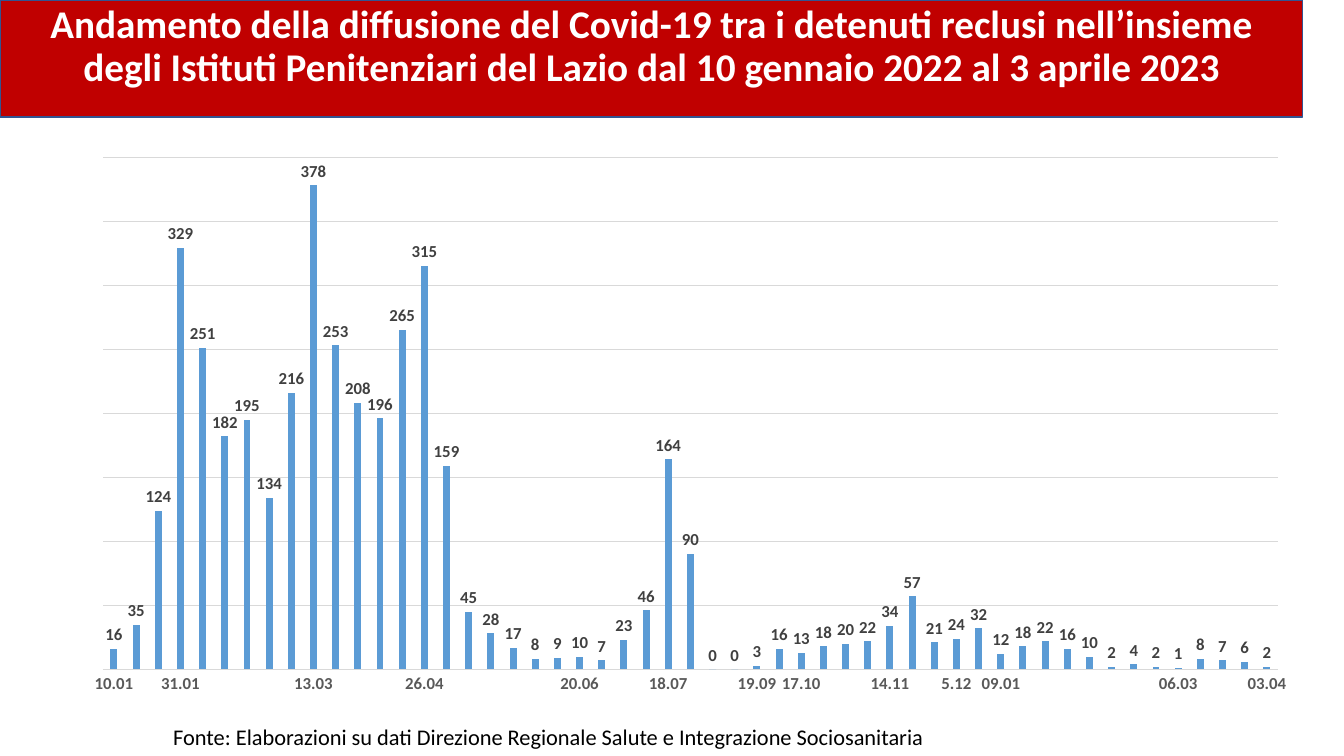
"""Build the slide on the spread of Covid-19 in the prisons of Lazio."""
from lxml import etree
from pptx import Presentation
from pptx.chart.data import CategoryChartData
from pptx.dml.color import RGBColor
from pptx.enum.chart import XL_CHART_TYPE, XL_LABEL_POSITION, XL_TICK_MARK
from pptx.enum.text import MSO_ANCHOR, MSO_AUTO_SIZE, PP_ALIGN
from pptx.oxml import parse_xml
from pptx.oxml.ns import nsdecls, qn
from pptx.util import Inches, Pt

TITLE = ("Andamento della diffusione del Covid-19 tra i detenuti reclusi nell’insieme "
         "degli Istituti Penitenziari del Lazio dal 10 gennaio 2022 al 3 aprile 2023")
SOURCE = "Fonte: Elaborazioni su dati Direzione Regionale Salute e Integrazione Sociosanitaria"
CASES = [16, 35, 124, 329, 251, 182, 195, 134, 216, 378, 253, 208, 196, 265, 315, 159, 45, 28,
         17, 8, 9, 10, 7, 23, 46, 164, 90, 0, 0, 3, 16, 13, 18, 20, 22, 34, 57, 21, 24, 32, 12,
         18, 22, 16, 10, 2, 4, 2, 1, 8, 7, 6, 2]
DATES = {0: "10.01", 3: "31.01", 9: "13.03", 14: "26.04", 21: "20.06", 25: "18.07",
         29: "19.09", 31: "17.10", 35: "14.11", 38: "5.12", 40: "09.01", 48: "06.03",
         52: "03.04"}
PLOT_SHARES = {"x": 0.027, "y": 0.02, "w": 0.953, "h": 0.924}

FONT = "Calibri"
RED = RGBColor(0xC0, 0x00, 0x00)
NAVY = RGBColor(0x32, 0x54, 0x91)
WHITE = RGBColor(0xFF, 0xFF, 0xFF)
BLACK = RGBColor(0x00, 0x00, 0x00)
BLUE = RGBColor(0x5B, 0x9B, 0xD5)
GRID_GREY = RGBColor(0xD9, 0xD9, 0xD9)
AXIS_GREY = RGBColor(0x59, 0x59, 0x59)
LABEL_GREY = RGBColor(0x40, 0x40, 0x40)


def set_font(font, size, color, bold=False):
    font.name = FONT
    font.size = Pt(size)
    font.bold = bold
    font.color.rgb = color


def set_line(line, color, width):
    line.color.rgb = color
    line.width = Pt(width)


def add_title(slide):
    title = slide.shapes.title
    title.left, title.top = 0, 0
    title.width, title.height = Inches(12.92), Inches(1.16)
    title.fill.solid()
    title.fill.fore_color.rgb = RED
    set_line(title.line, NAVY, 1)
    frame = title.text_frame
    frame.text = TITLE
    frame.word_wrap = True
    frame.auto_size = MSO_AUTO_SIZE.NONE
    frame.vertical_anchor = MSO_ANCHOR.TOP
    paragraph = frame.paragraphs[0]
    paragraph.alignment = PP_ALIGN.CENTER
    paragraph.line_spacing = 0.9
    set_font(paragraph.runs[0].font, 28, WHITE, True)


def add_source(slide):
    box = slide.shapes.add_textbox(Inches(1.62), Inches(7.13), Inches(7.84), Inches(0.37))
    frame = box.text_frame
    frame.text = SOURCE
    frame.word_wrap = False
    frame.auto_size = MSO_AUTO_SIZE.SHAPE_TO_FIT_TEXT
    set_font(frame.paragraphs[0].runs[0].font, 16, BLACK)


def fix_plot_area(chart):
    plot_area = chart.plots[0]._element.getparent()
    for layout in plot_area.findall(qn("c:layout")):
        plot_area.remove(layout)
    settings = {"layoutTarget": "inner", "xMode": "edge", "yMode": "edge", **PLOT_SHARES}
    items = "".join(f'<c:{name} val="{value}"/>' for name, value in settings.items())
    plot_area.insert(0, parse_xml(
        f'<c:layout {nsdecls("c")}><c:manualLayout>{items}</c:manualLayout></c:layout>'))


def add_cases_chart(slide):
    data = CategoryChartData()
    data.categories = [DATES.get(week, "") for week in range(len(CASES))]
    data.add_series("Series 1", CASES)
    chart = slide.shapes.add_chart(XL_CHART_TYPE.COLUMN_CLUSTERED, Inches(0.69), Inches(1.45),
                                   Inches(12.23), Inches(5.5), data).chart
    chart.has_title = False
    chart.has_legend = False
    set_font(chart.font, 12, BLACK, True)

    plot = chart.plots[0]
    plot.gap_width, plot.overlap = 219, -27
    plot.vary_by_categories = False
    fill = plot.series[0].format.fill
    fill.solid()
    fill.fore_color.rgb = BLUE
    plot.has_data_labels = True
    labels = plot.data_labels
    labels.show_value = True
    labels.position = XL_LABEL_POSITION.OUTSIDE_END
    set_font(labels.font, 12, LABEL_GREY, True)

    dates = chart.category_axis
    dates.major_tick_mark = XL_TICK_MARK.NONE
    dates.minor_tick_mark = XL_TICK_MARK.NONE
    set_line(dates.format.line, GRID_GREY, 0.75)
    set_font(dates.tick_labels.font, 12, AXIS_GREY, True)
    dates._element.find(qn("c:txPr")).find(qn("a:bodyPr")).set("rot", "-60000000")
    skip = etree.Element(qn("c:tickLblSkip"), val="1")
    dates._element.find(qn("c:noMultiLvlLbl")).addprevious(skip)

    scale = chart.value_axis
    scale.visible = False
    scale.minimum_scale, scale.maximum_scale, scale.major_unit = 0, 400, 50
    scale.has_major_gridlines = True
    set_line(scale.major_gridlines.format.line, GRID_GREY, 0.75)
    fix_plot_area(chart)


def main():
    presentation = Presentation()
    presentation.slide_width, presentation.slide_height = Inches(13.33), Inches(7.5)
    slide = presentation.slides.add_slide(presentation.slide_layouts[5])
    add_title(slide)
    add_source(slide)
    add_cases_chart(slide)
    presentation.save("out.pptx")


if __name__ == "__main__":
    main()
